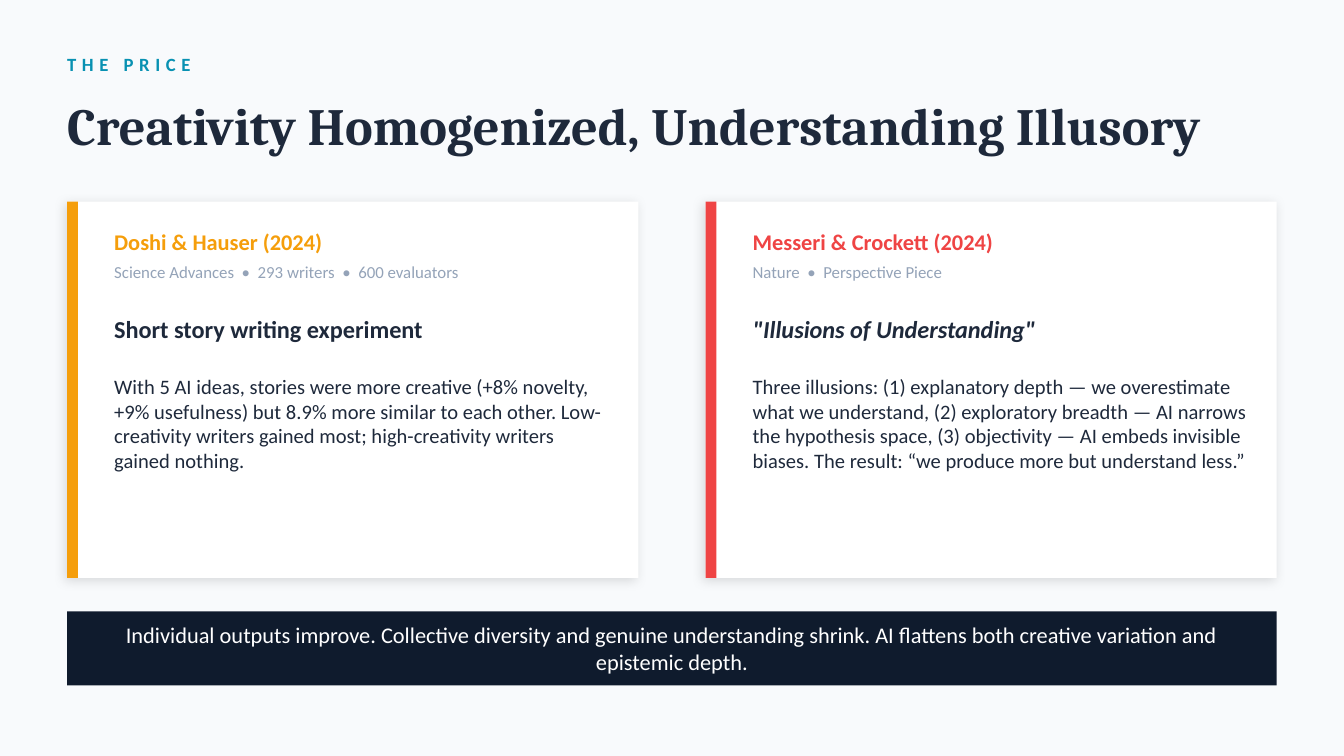
from dataclasses import dataclass

from lxml import etree
from pptx import Presentation
from pptx.dml.color import RGBColor
from pptx.enum.shapes import MSO_SHAPE
from pptx.enum.text import MSO_ANCHOR, MSO_AUTO_SIZE, PP_ALIGN
from pptx.oxml.ns import qn
from pptx.util import Inches, Pt

RECT = MSO_SHAPE.RECTANGLE
MIDDLE = MSO_ANCHOR.MIDDLE
NO_FIT = MSO_AUTO_SIZE.NONE
LEFT, CENTER = PP_ALIGN.LEFT, PP_ALIGN.CENTER


@dataclass(frozen=True)
class Theme:
    """Colours, fonts and type sizes of the slide."""
    page: str = "F8FAFC"
    card: str = "FFFFFF"
    ink: str = "1E293B"
    muted: str = "94A3B8"
    teal: str = "0891B2"
    amber: str = "F59E0B"
    red: str = "EF4444"
    navy: str = "0F1B2D"
    white: str = "FFFFFF"
    shadow: str = "000000"
    head_font: str = "Cambria"
    body_font: str = "Calibri"
    title_size: int = 28
    topic_size: int = 13
    lead_size: int = 12
    body_size: int = 11
    kicker_size: int = 10
    meta_size: int = 9


THEME = Theme()

CARDS = [
    dict(color=THEME.amber, study="Doshi & Hauser (2024)",
         meta="Science Advances  •  293 writers  •  600 evaluators",
         topic="Short story writing experiment", italic=False,
         body="With 5 AI ideas, stories were more creative (+8% novelty, "
              "+9% usefulness) but 8.9% more similar to each other. "
              "Low-creativity writers gained most; high-creativity writers "
              "gained nothing."),
    dict(color=THEME.red, study="Messeri & Crockett (2024)",
         meta="Nature  •  Perspective Piece",
         topic='"Illusions of Understanding"', italic=True,
         body="Three illusions: (1) explanatory depth — we overestimate what "
              "we understand, (2) exploratory breadth — AI narrows the "
              "hypothesis space, (3) objectivity — AI embeds invisible "
              "biases. The result: “we produce more but understand less.”"),
]


def write(sp, text, size, color, font=THEME.body_font, bold=False,
          italic=False, align=LEFT):
    """Write one formatted run into a shape and return the run."""
    tf = sp.text_frame
    tf.word_wrap = True
    tf.auto_size = NO_FIT
    tf.vertical_anchor = MIDDLE
    tf.margin_left = tf.margin_right = 0
    tf.margin_top = tf.margin_bottom = 0
    p = tf.paragraphs[0]
    p.alignment = align
    r = p.add_run()
    r.text = text
    r.font.name = font
    r.font.size = Pt(size)
    r.font.bold = bold
    r.font.italic = italic
    r.font.color.rgb = RGBColor.from_string(color)
    return r


def add_text(s, x, y, w, h, *args, **kwargs):
    """Add a text box and return its run."""
    sp = s.shapes.add_textbox(Inches(x), Inches(y), Inches(w), Inches(h))
    return write(sp, *args, **kwargs)


def add_rect(s, x, y, w, h, color):
    """Add a plain filled rectangle."""
    sp = s.shapes.add_shape(RECT, Inches(x), Inches(y), Inches(w), Inches(h))
    sp.shadow.inherit = False
    sp.fill.solid()
    sp.fill.fore_color.rgb = RGBColor.from_string(color)
    sp.line.fill.background()
    return sp


def add_soft_shadow(sp):
    """Give a shape a faint outer shadow."""
    effects = sp._element.spPr.find(qn("a:effectLst"))
    shadow = etree.SubElement(
        effects, qn("a:outerShdw"), blurRad=str(Pt(6)), dist=str(Pt(2)),
        dir=str(135 * 60000), algn="bl", rotWithShape="0")
    color = etree.SubElement(shadow, qn("a:srgbClr"), val=THEME.shadow)
    etree.SubElement(color, qn("a:alpha"), val="12000")


def add_header(s, x, y, w):
    """Place the spaced kicker and the title."""
    r = add_text(s, x, y, 3, 0.35, "THE PRICE", THEME.kicker_size,
                 THEME.teal, bold=True)
    r.font._element.set("spc", "300")
    title = s.shapes.title
    title.left, title.top = Inches(x), Inches(y + 0.35)
    title.width, title.height = Inches(w), Inches(0.55)
    write(title, "Creativity Homogenized, Understanding Illusory",
          THEME.title_size, THEME.ink, font=THEME.head_font, bold=True)


def add_card(s, x, y, w, h, color, study, meta, topic, italic, body):
    """Place a study card with its accent stripe and four texts."""
    add_soft_shadow(add_rect(s, x, y, w, h, THEME.card))
    add_rect(s, x, y, 0.08, h, color)
    rows = [
        (0.15, 0.3, study, THEME.lead_size, color, dict(bold=True)),
        (0.4, 0.25, meta, THEME.meta_size, THEME.muted, {}),
        (0.8, 0.3, topic, THEME.topic_size, THEME.ink,
         dict(bold=True, italic=italic)),
        (1.15, 1, body, THEME.body_size, THEME.ink, {}),
    ]
    for dy, row_h, text, size, ink, style in rows:
        add_text(s, x + 0.35, y + dy, w - 0.55, row_h, text, size, ink,
                 **style)


def add_takeaway(s, x, y, w, h):
    """Place the dark takeaway bar and its centred text."""
    add_rect(s, x, y, w, h, THEME.navy)
    add_text(s, x + 0.2, y, w - 0.4, h,
             "Individual outputs improve. Collective diversity and genuine "
             "understanding shrink. AI flattens both creative variation and "
             "epistemic depth.", THEME.lead_size, THEME.white, align=CENTER)


def main():
    """Build and save the slide."""
    prs = Presentation()
    prs.slide_width = Inches(10)
    prs.slide_height = Inches(10 * 9 / 16)
    s = prs.slides.add_slide(prs.slide_layouts.get_by_name("Title Only"))
    s.background.fill.solid()
    s.background.fill.fore_color.rgb = RGBColor.from_string(THEME.page)

    margin, width, gap = 0.5, 9, 0.5
    card_w = (width - gap) / len(CARDS)
    add_header(s, margin, 0.3, width)
    for i, card in enumerate(CARDS):
        add_card(s, margin + i * (card_w + gap), 1.5, card_w, 2.8, **card)
    add_takeaway(s, margin, 4.55, width, 0.55)
    prs.save("out.pptx")


if __name__ == "__main__":
    main()
